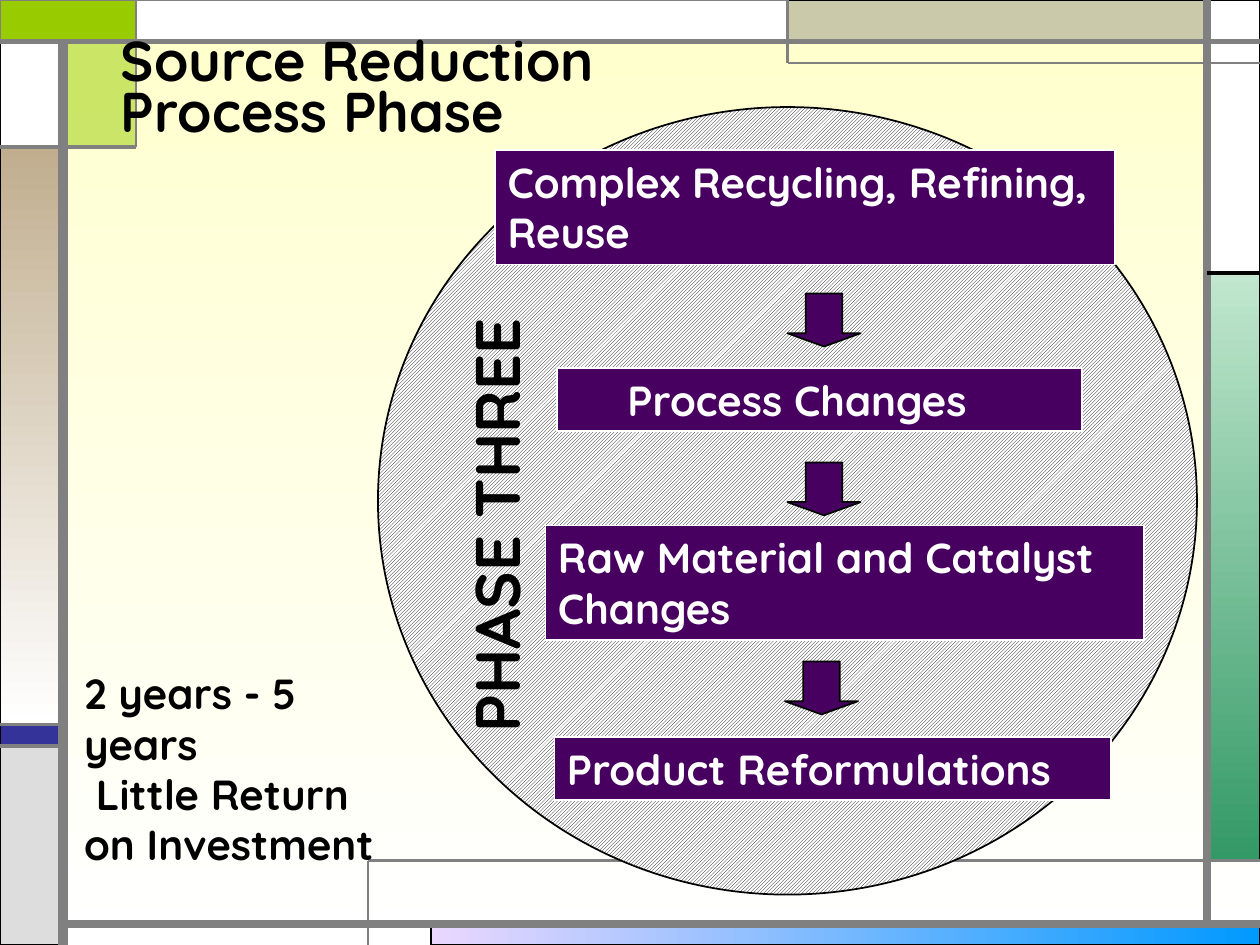
from lxml import etree
from pptx import Presentation
from pptx.dml.color import RGBColor
from pptx.enum.dml import MSO_PATTERN
from pptx.enum.shapes import MSO_CONNECTOR, MSO_SHAPE
from pptx.enum.text import MSO_ANCHOR, MSO_AUTO_SIZE, PP_ALIGN
from pptx.oxml.ns import qn
from pptx.util import Inches, Pt

RECT, OVAL, DOWN = MSO_SHAPE.RECTANGLE, MSO_SHAPE.OVAL, MSO_SHAPE.DOWN_ARROW
STRAIGHT = MSO_CONNECTOR.STRAIGHT
HATCH = MSO_PATTERN.LIGHT_UPWARD_DIAGONAL
LEFT, TOP, FIXED = PP_ALIGN.LEFT, MSO_ANCHOR.TOP, MSO_AUTO_SIZE.NONE
FONT = "Quicksand"
HEX = {
    "black": "000000", "white": "FFFFFF", "grey": "808080", "silver": "DDDDDD",
    "cream": "FFFFCC", "lilac": "EBD7FF", "sky": "0099FF", "mint": "C1E7CE",
    "green": "339966", "navy": "333399", "khaki": "CAC9AA", "lime": "99CC00",
    "tan": "C1AE8F", "purple": "470060",
}
C = {name: RGBColor.from_string(value) for name, value in HEX.items()}


def paint(fill, colors, angle=270):
    """One colour gives a solid fill, two give a gradient."""
    if len(colors) == 1:
        fill.solid()
        fill.fore_color.rgb = C[colors[0]]
        return
    fill.gradient()
    fill.gradient_angle = angle
    for stop, color in zip(fill.gradient_stops, colors):
        stop.color.rgb = C[color]


def write(sp, lines, size, color, spacing=None):
    tf = sp.text_frame
    tf.word_wrap, tf.auto_size, tf.vertical_anchor = True, FIXED, TOP
    for i, line in enumerate(lines):
        p = tf.add_paragraph() if i else tf.paragraphs[0]
        p.alignment = LEFT
        if spacing:
            p.line_spacing = spacing
        r = p.add_run()
        r.text = line
        r.font.name, r.font.size, r.font.bold = FONT, Pt(size), True
        r.font.color.rgb = C[color]


prs = Presentation()
prs.slide_width, prs.slide_height = Inches(10), Inches(7.5)
s = prs.slides.add_slide(prs.slide_layouts[5])
paint(s.background.fill, ["cream", "white"])

# Frame panels: left, top, width, height, colours, gradient angle, line, points
panels = [
    (3.42, 7.33, 6.58, 0.17, ["lilac", "sky"], 0, "black", 0.75),
    (9.58, 2.17, 0.42, 4.67, ["mint", "green"], 270, "black", 0.75),
    (0, 5.75, 0.5, 0.17, ["navy"], 0, "black", 0.75),
    (0, 5.92, 0.5, 1.58, ["silver"], 0, "black", 0.75),
    (9.58, 0, 0.42, 2.17, ["white"], 0, "black", 0.75),
    (6.25, 0, 3.33, 0.33, ["khaki"], 0, "black", 0.75),
    (0.5, 0.33, 0.58, 0.83, ["lime"], 0, "black", 0.75),
    (0, 1.17, 0.5, 4.58, ["tan", "white"], 270, "black", 0.75),
    (0, 0.33, 0.5, 0.83, ["white"], 0, "black", 0.75),
    (0, 0, 1.08, 0.33, ["lime"], 0, "grey", 1.5),
    (1.08, 0, 5.17, 0.33, ["white"], 0, "grey", 0.75),
]
for x, y, w, h, colors, angle, line, width in panels:
    sp = s.shapes.add_shape(RECT, Inches(x), Inches(y), Inches(w), Inches(h))
    sp.shadow.inherit = False
    paint(sp.fill, colors, angle)
    sp.line.color.rgb, sp.line.width = C[line], Pt(width)
    if (x, y) == (0.5, 0.33):  # half-transparent lime corner
        clr = sp.fill._xPr.find(qn("a:solidFill"))[0]
        etree.SubElement(clr, qn("a:alpha"), val="50000")

# Frame lines: from x, y, to x, y, colour, points
frame_lines = [
    (0.5, 7.5, 0.5, 0.33, "grey", 6),
    (0.5, 7.33, 10, 7.33, "grey", 4.5),
    (9.58, 7.33, 9.58, 0, "grey", 4.5),
    (0, 0.33, 10, 0.33, "grey", 3),
    (10, 0.5, 6.25, 0.5, "grey", 1.5),
    (6.25, 0.5, 6.25, 0, "grey", 1.5),
    (9.58, 2.17, 10, 2.17, "black", 2.25),
    (1.08, 0, 1.08, 1.17, "grey", 1.5),
    (1.08, 1.17, 0, 1.17, "grey", 2.25),
    (2.92, 7.5, 2.92, 6.83, "grey", 1.5),
    (2.92, 6.83, 10, 6.83, "grey", 1.5),
    (0.5, 5.75, 0, 5.75, "grey", 2.25),
    (0.5, 5.92, 0, 5.92, "grey", 2.25),
]
for x1, y1, x2, y2, color, width in frame_lines:
    ln = s.shapes.add_connector(STRAIGHT, Inches(x1), Inches(y1), Inches(x2), Inches(y2))
    ln.line.color.rgb, ln.line.width = C[color], Pt(width)
    etree.SubElement(ln._element.spPr, qn("a:effectLst"))

# Title, brought in front of the frame
title = s.shapes.title
title.left, title.top = Inches(0.86), Inches(0.28)
title.width, title.height = Inches(5.64), Inches(0.91)
write(title, ["Source Reduction Process Phase"], 32, "black", 0.75)
s.shapes._spTree.append(title._element)

# Payback note
note = s.shapes.add_textbox(Inches(0.57), Inches(5.25), Inches(2.5), Inches(1.3))
write(note, ["2 years - 5 years", " Little Return", "on Investment"], 24, "black")

# Hatched circle with its upright label
circle = s.shapes.add_shape(OVAL, Inches(3), Inches(0.85), Inches(6.5), Inches(6.25))
circle.shadow.inherit = False
circle.fill.patterned()
circle.fill.pattern = HATCH
circle.fill.fore_color.rgb, circle.fill.back_color.rgb = C["black"], C["white"]
circle.line.color.rgb, circle.line.width = C["black"], Pt(1)

label = s.shapes.add_textbox(Inches(2.02), Inches(3.65), Inches(3.83), Inches(0.7))
label.rotation = 270
write(label, ["PHASE THREE"], 36, "black")

# Process steps: left, top, width, height, left margin, text
steps = [
    (3.93, 1.19, 4.92, 0.91, 0.1, "Complex Recycling, Refining, Reuse"),
    (4.42, 2.92, 4.17, 0.5, 0.56, "Process Changes"),
    (4.33, 4.17, 4.75, 0.91, 0.1, "Raw Material and Catalyst Changes"),
    (4.4, 5.85, 4.42, 0.5, 0.1, "Product Reformulations"),
]
for x, y, w, h, margin, text in steps:
    sp = s.shapes.add_shape(RECT, Inches(x), Inches(y), Inches(w), Inches(h))
    sp.shadow.inherit = False
    paint(sp.fill, ["purple"])
    sp.line.color.rgb, sp.line.width = C["white"], Pt(1)
    sp.text_frame.margin_left = Inches(margin)
    write(sp, [text], 24, "white")

# Arrows between the steps
for x, y in [(6.25, 2.33), (6.25, 3.67), (6.23, 5.25)]:
    sp = s.shapes.add_shape(DOWN, Inches(x), Inches(y), Inches(0.58), Inches(0.42))
    sp.adjustments[0], sp.adjustments[1] = 0.5, 0.25
    sp.shadow.inherit = False
    paint(sp.fill, ["purple"])
    sp.line.color.rgb, sp.line.width = C["black"], Pt(1)

prs.save("out.pptx")
